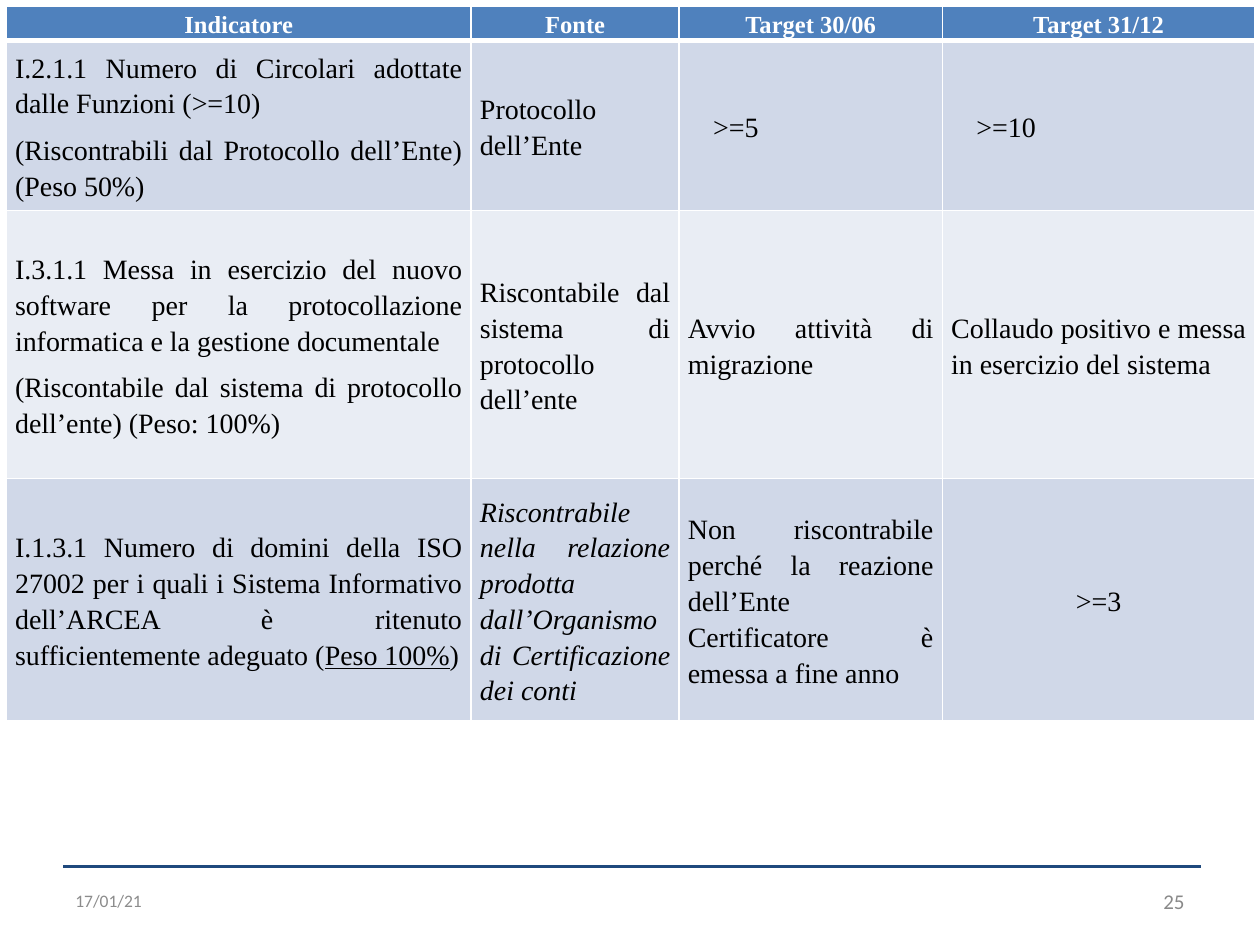
"""Build the slide with the table of indicators, sources and half-year targets."""
from lxml.etree import SubElement
from pptx import Presentation
from pptx.dml.color import RGBColor
from pptx.enum.shapes import MSO_CONNECTOR
from pptx.enum.text import MSO_ANCHOR, PP_ALIGN
from pptx.oxml.ns import qn
from pptx.util import Inches, Pt


def colour(hex_string):
    return RGBColor.from_string(hex_string)


def add_run(paragraph, text, font_name, size, hex_string, style=""):
    run = paragraph.add_run()
    run.text = text
    run.font.name = font_name
    run.font.size = Pt(size)
    run.font.color.rgb = colour(hex_string)
    run.font.bold = "b" in style
    run.font.italic = "i" in style
    run.font.underline = "u" in style


presentation = Presentation()
presentation.slide_width = Inches(10)
presentation.slide_height = Inches(7.5)
width, height = presentation.slide_width, presentation.slide_height
slide = presentation.slides.add_slide(presentation.slide_layouts[6])

rule_top = int(height * 0.917)
rule = slide.shapes.add_connector(
    MSO_CONNECTOR.STRAIGHT, int(width * 0.05), rule_top, int(width * 0.953), rule_top
)
rule.line.color.rgb = colour("1F497D")
rule.line.width = Pt(1.5)
SubElement(rule._element.spPr, qn("a:effectLst"))

for left, text, size, hex_string, alignment in [
    (0.05, "17/01/21", 10, "8C8C8C", PP_ALIGN.LEFT),
    (0.717, "25", 12, "898989", PP_ALIGN.RIGHT),
]:
    footer = slide.shapes.add_textbox(
        int(width * left), Inches(6.95), int(width * 0.233), Inches(0.4)
    )
    footer.text_frame.word_wrap = True
    footer.text_frame.vertical_anchor = MSO_ANCHOR.MIDDLE
    paragraph = footer.text_frame.paragraphs[0]
    paragraph.alignment = alignment
    add_run(paragraph, text, "Calibri", size, hex_string)

column_widths = [3.69, 1.65, 2.09, 2.48]
row_heights = [0.27, 1.35, 2.13, 1.92]
row_fills = ["4F81BD", "D0D8E8", "E9EDF4", "D0D8E8"]
rows = [
    [[[("Indicatore", "b")]], [[("Fonte", "b")]],
     [[("Target 30/06", "b")]], [[("Target 31/12", "b")]]],
    [[[("I.2.1.1 Numero di Circolari adottate dalle Funzioni (>=10)", "")],
      [("(Riscontrabili dal Protocollo dell’Ente) (Peso 50%)", "")]],
     [[("Protocollo dell’Ente", "")]],
     [[(">=5", "")]],
     [[(">=10", "")]]],
    [[[("I.3.1.1 Messa in esercizio del nuovo software per la protocollazione "
        "informatica e la gestione documentale", "")],
      [("(Riscontabile dal sistema di protocollo dell’ente) (Peso: 100%)", "")]],
     [[("Riscontabile dal sistema di protocollo dell’ente", "")]],
     [[("Avvio attività di migrazione", "")]],
     [[("Collaudo positivo e messa in esercizio del sistema", "")]]],
    [[[("I.1.3.1 Numero di domini della ISO 27002 per i quali i Sistema Informativo "
        "dell’ARCEA è ritenuto sufficientemente adeguato (", ""),
       ("Peso 100%", "u"), (")", "")]],
     [[("Riscontrabile nella relazione prodotta dall’Organismo di Certificazione "
        "dei conti", "i")]],
     [[("Non riscontrabile perché la reazione dell’Ente Certificatore è emessa "
        "a fine anno", "")]],
     [[(">=3", "")]]],
]
centred = {(0, 0), (0, 1), (0, 2), (0, 3), (3, 3)}
indented = {(1, 2), (1, 3)}
spaced = {(1, 0), (1, 1), (1, 2), (1, 3), (2, 0), (2, 1)}

table = slide.shapes.add_table(
    len(rows), len(column_widths), Inches(0.05), Inches(0.05),
    Inches(sum(column_widths)), Inches(sum(row_heights)),
).table
for column, column_width in zip(table.columns, column_widths):
    column.width = Inches(column_width)

for row_index, row in enumerate(rows):
    table.rows[row_index].height = Inches(row_heights[row_index])
    size, text_colour = (16, "000000") if row_index else (14, "FFFFFF")
    border_widths = {"L": 1, "R": 1, "T": 3 if row_index == 1 else 1,
                     "B": 1 if row_index else 3}
    for column_index, paragraphs in enumerate(row):
        position = (row_index, column_index)
        cell = table.cell(*position)
        cell.margin_left = cell.margin_right = Inches(0.07)
        cell.margin_top = cell.margin_bottom = 0
        cell.vertical_anchor = MSO_ANCHOR.MIDDLE
        for side, border_width in border_widths.items():
            border = SubElement(cell._tc.get_or_add_tcPr(), qn(f"a:ln{side}"),
                                w=str(Pt(border_width)))
            border_fill = SubElement(border, qn("a:solidFill"))
            SubElement(border_fill, qn("a:srgbClr"), val="FFFFFF")
        cell.fill.solid()
        cell.fill.fore_color.rgb = colour(row_fills[row_index])
        for index, runs in enumerate(paragraphs):
            frame = cell.text_frame
            paragraph = frame.add_paragraph() if index else frame.paragraphs[0]
            paragraph.alignment = PP_ALIGN.CENTER if position in centred else PP_ALIGN.JUSTIFY
            paragraph.line_spacing = 1.15
            if position in spaced:
                paragraph.space_after = Pt(6)
            if position in indented:
                paragraph._p.get_or_add_pPr().set("marL", str(Inches(0.2)))
            for text, style in runs:
                add_run(paragraph, text, "Times New Roman", size, text_colour, style)

presentation.save("out.pptx")
